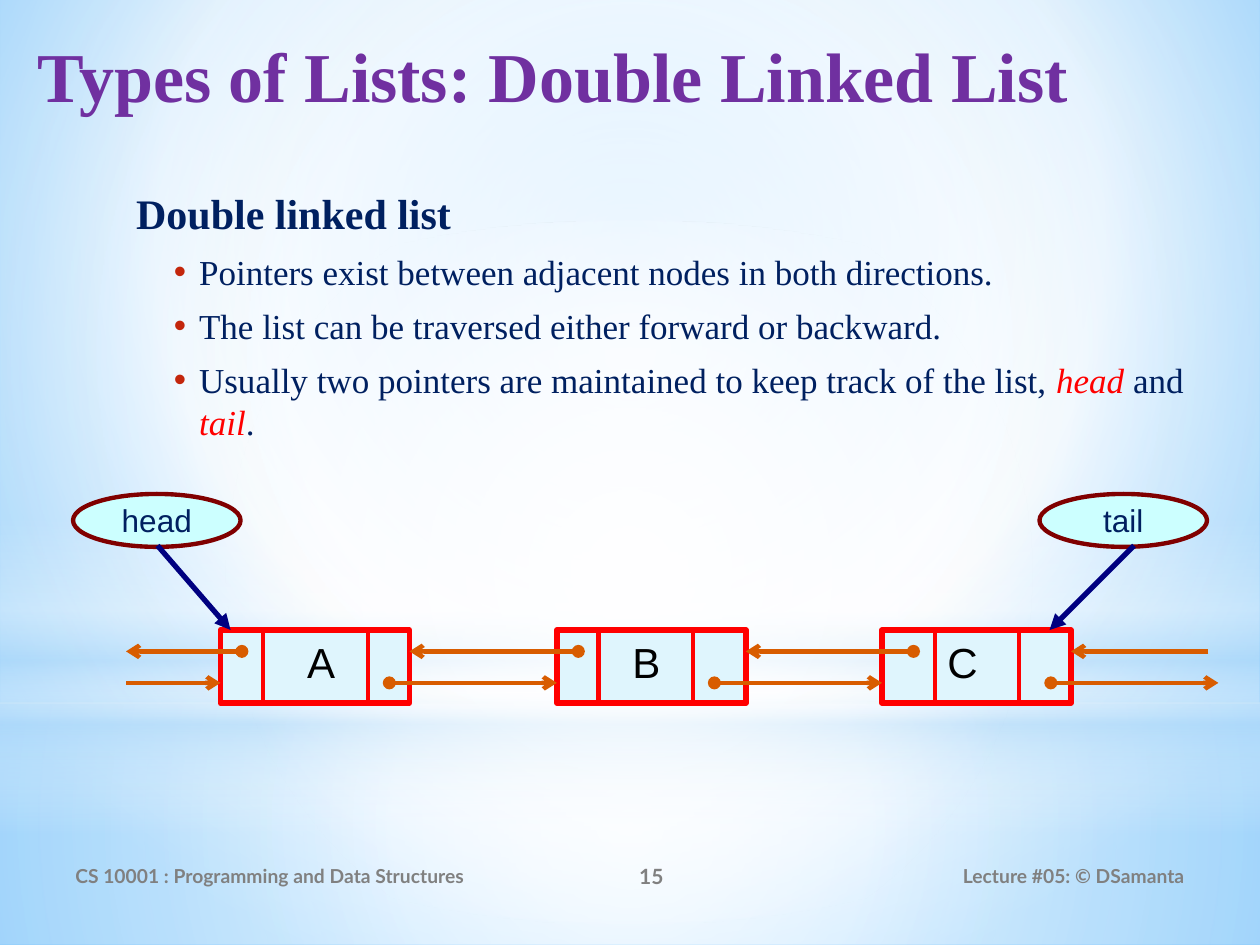
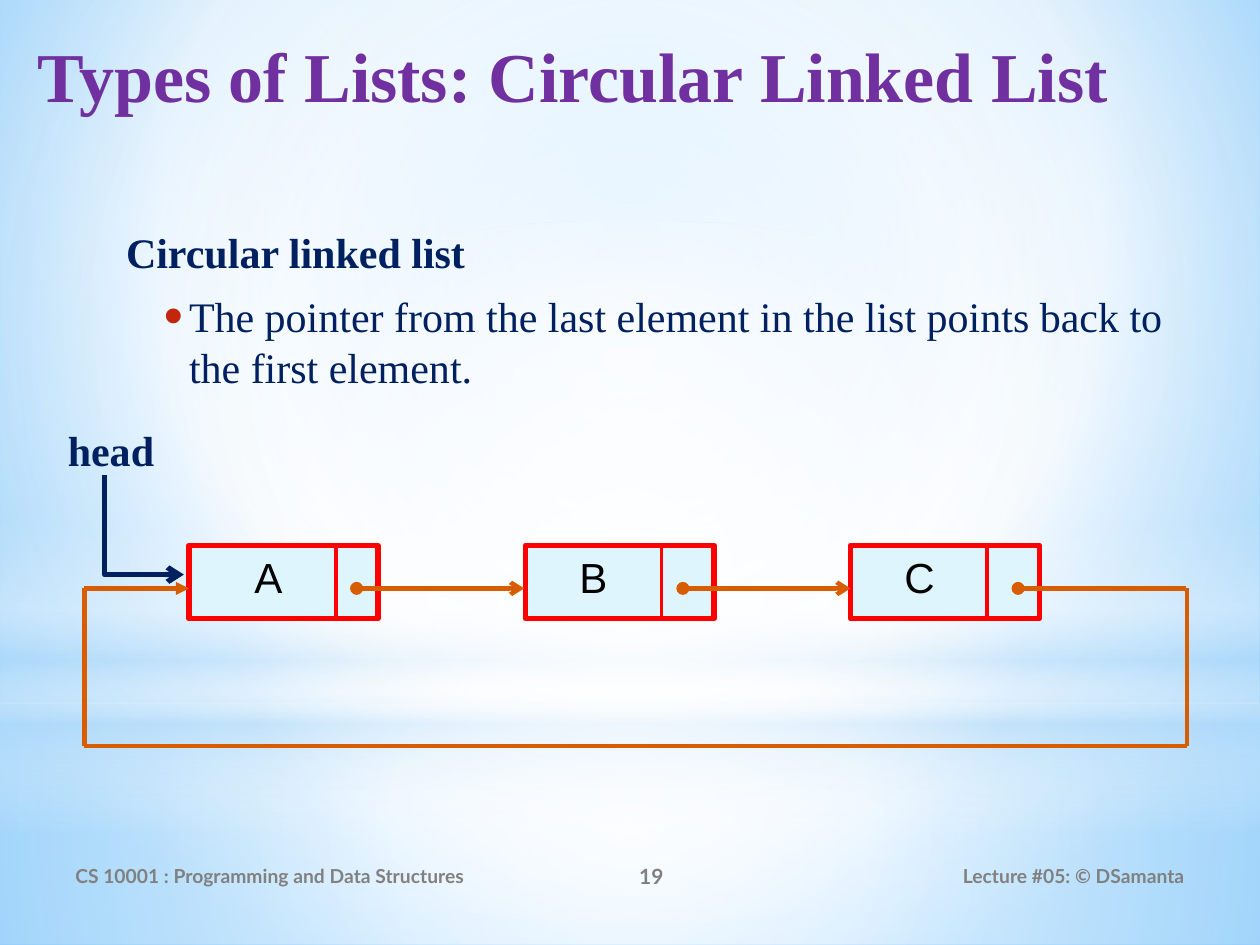
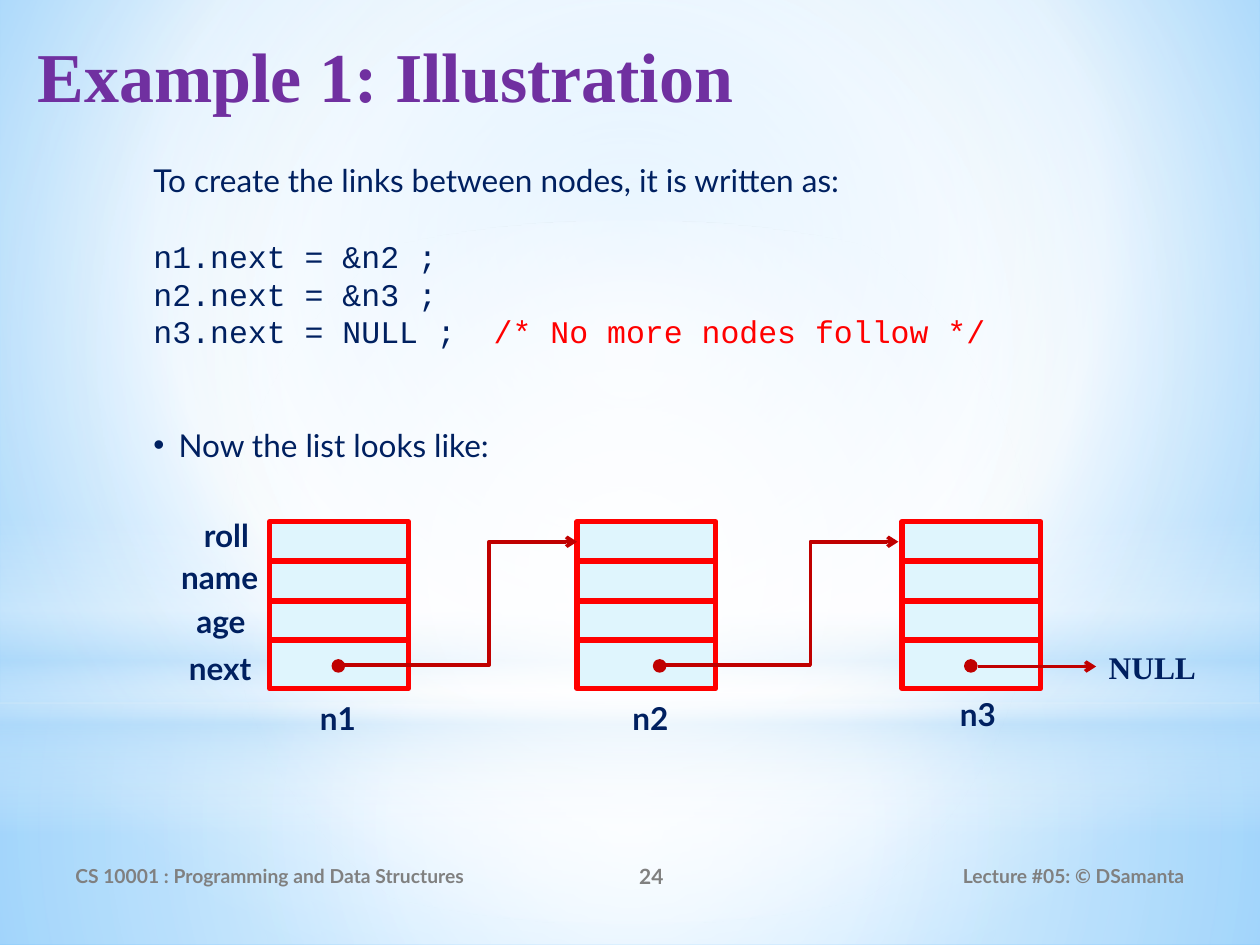
"""Build three lecture slides on linked lists."""
from dataclasses import dataclass, replace
from typing import Optional

from lxml.etree import SubElement
from pptx import Presentation
from pptx.dml.color import RGBColor
from pptx.enum.shapes import MSO_CONNECTOR, MSO_SHAPE
from pptx.enum.text import MSO_ANCHOR, MSO_AUTO_SIZE, PP_ALIGN
from pptx.oxml.ns import qn
from pptx.util import Inches, Pt

PURPLE = RGBColor(0x70, 0x30, 0xA0)
NAVY = RGBColor(0x00, 0x20, 0x60)
POINTER_BLUE = RGBColor(0x00, 0x00, 0x80)
RED = RGBColor(0xFF, 0x00, 0x00)
DARK_RED = RGBColor(0xC0, 0x00, 0x00)
MAROON = RGBColor(0x80, 0x00, 0x00)
BULLET_RED = RGBColor(0xC3, 0x26, 0x0C)
ORANGE = RGBColor(0xD8, 0x5C, 0x00)
GRAY = RGBColor(0x80, 0x80, 0x80)
BLACK = RGBColor(0x00, 0x00, 0x00)
WHITE = RGBColor(0xFF, 0xFF, 0xFF)
CELL_BLUE = RGBColor(0xDF, 0xF5, 0xFD)
PALE_CYAN = RGBColor(0xCC, 0xFF, 0xFF)
SKY = RGBColor(0xB4, 0xDC, 0xFA)
LIGHT_SKY = RGBColor(0x9E, 0xD5, 0xFF)
DEEP_SKY = RGBColor(0x5B, 0xB9, 0xFF)


@dataclass(frozen=True)
class Style:
    """Look of a run of text."""
    font: str
    size: float
    color: RGBColor = NAVY
    bold: bool = False
    italic: bool = False


@dataclass(frozen=True)
class Stroke:
    """Look of a line and of its two ends."""
    color: RGBColor
    width: float
    start: str = "none"
    end: str = "none"


@dataclass(frozen=True)
class Gradient:
    """Stops of position, colour and opacity; radial when focus is given."""
    stops: tuple
    focus: Optional[tuple] = None


@dataclass(frozen=True)
class Glow:
    """One layer of the backdrop."""
    preset: MSO_SHAPE
    bounds: tuple
    gradient: Gradient


@dataclass(frozen=True)
class ListNode:
    """A node with its letter, dividers and the start of its next pointer."""
    letter: str
    left: float
    letter_left: float
    dividers: tuple
    next_dot: float


@dataclass(frozen=True)
class Label:
    """A short caption."""
    text: str
    left: float
    top: float
    width: float


TITLE = Style("Times New Roman", 40, PURPLE, bold=True)
HEADING = Style("Times New Roman", 24, bold=True)
BULLET = Style("Times New Roman", 20)
KEYWORD = replace(BULLET, color=RED, italic=True)
LETTER = Style("Arial", 24, BLACK)
POINTER = Style("Arial", 18)
PROSE = Style("Lato", 18)
FIELD = replace(PROSE, bold=True)
CODE = Style("Courier New", 18)
FOOTER = Style("Lato", 11, GRAY, bold=True)

LINK = Stroke(ORANGE, 2.5, "oval", "arrow")
INCOMING = replace(LINK, start="none")
PLAIN = replace(INCOMING, end="none")
BORDER = Stroke(RED, 3.25)
POINTER_ARROW = Stroke(POINTER_BLUE, 3, end="triangle")
RECORD_LINK = Stroke(DARK_RED, 2, end="arrow")

LINK_LENGTH = 1.33
NODE_WIDTH, NODE_HEIGHT = 1.5, 0.58
CENTRE = (50, 50, 50, 50)
BACKGROUND = Gradient(
    ((0, LIGHT_SKY, 100), (60, WHITE, 100), (100, DEEP_SKY, 100)), (20, 10, 20, 60))
GLOWS = (
    Glow(MSO_SHAPE.RECTANGLE, (0, 5.58, 10, 1.92),
         Gradient(((0, WHITE, 91), (37, WHITE, 76), (100, SKY, 79)), CENTRE)),
    Glow(MSO_SHAPE.RECTANGLE, (0, 0, 10, 5.58),
         Gradient(((0, WHITE, 89), (48, WHITE, 62), (100, SKY, 79)), CENTRE)),
    Glow(MSO_SHAPE.RECTANGLE, (0, 4.12, 10, 2.5),
         Gradient(((0, WHITE, 0), (29, WHITE, 30), (45, SKY, 40),
                   (55, WHITE, 26), (65, SKY, 60), (100, WHITE, 0)))),
    Glow(MSO_SHAPE.OVAL, (0, 1.75, 10, 5.58),
         Gradient(((0, WHITE, 100), (56, WHITE, 0)), CENTRE)),
)


def inches(*lengths: float) -> list:
    """Convert lengths to Inches."""
    return [Inches(length) for length in lengths]


def paint_gradient(fill, owner, gradient: Gradient) -> None:
    """Give a fill inside the owner element its gradient."""
    fill.gradient()
    grad = owner.find(".//" + qn("a:gradFill"))
    for child in list(grad):
        grad.remove(child)
    stop_list = SubElement(grad, qn("a:gsLst"))
    for position, color, opacity in gradient.stops:
        stop = SubElement(stop_list, qn("a:gs"), pos=str(position * 1000))
        tone = SubElement(stop, qn("a:srgbClr"), val=str(color))
        SubElement(tone, qn("a:alpha"), val=str(opacity * 1000))
    if gradient.focus:
        radial = SubElement(grad, qn("a:path"), path="circle")
        edges = {side: str(share * 1000) for side, share in zip("ltrb", gradient.focus)}
        SubElement(radial, qn("a:fillToRect"), **edges)
    else:
        SubElement(grad, qn("a:lin"), ang="5400000", scaled="0")


def build_backdrop(layout, slide) -> None:
    """Draw the glows and hand them to the layout."""
    paint_gradient(layout.background.fill, layout.element, BACKGROUND)
    for number, glow in enumerate(GLOWS, start=20):
        layer = slide.shapes.add_shape(glow.preset, *inches(*glow.bounds))
        layer.shadow.inherit = False
        layer.line.fill.background()
        paint_gradient(layer.fill, layer.element, glow.gradient)
        layer.element.find(".//" + qn("p:cNvPr")).set("id", str(number))
        layout.shapes.element.append(layer.element)


def format_run(run, style: Style) -> None:
    """Apply a style to a run."""
    font = run.font
    font.name, font.size = style.font, Pt(style.size)
    font.bold, font.italic = style.bold, style.italic
    font.color.rgb = style.color


def fill_paragraph(paragraph, *pieces: tuple) -> None:
    """Write pieces of text and style into a paragraph."""
    for text, style in pieces:
        run = paragraph.add_run()
        run.text = text
        format_run(run, style)


def set_bullet(paragraph, margin: float, hanging: float,
               color: Optional[RGBColor] = None, percent: int = 100) -> None:
    """Indent a paragraph, with a bullet if a colour is given."""
    props = paragraph._p.get_or_add_pPr()
    props.set("marL", str(Inches(margin)))
    props.set("indent", str(-Inches(hanging)))
    if color is None:
        SubElement(props, qn("a:buNone"))
        return
    SubElement(SubElement(props, qn("a:buClr")), qn("a:srgbClr"), val=str(color))
    SubElement(props, qn("a:buSzPct"), val=str(percent * 1000))
    SubElement(props, qn("a:buFont"), typeface="Arial")
    SubElement(props, qn("a:buChar"), char="•")


def add_text(slide, bounds: tuple, text: str, style: Style,
             align: PP_ALIGN = PP_ALIGN.LEFT, anchor: MSO_ANCHOR = MSO_ANCHOR.TOP) -> None:
    """Add a one-paragraph text box."""
    frame = slide.shapes.add_textbox(*inches(*bounds)).text_frame
    frame.word_wrap = True
    frame.vertical_anchor = anchor
    frame.text = text
    frame.paragraphs[0].alignment = align
    format_run(frame.paragraphs[0].runs[0], style)


def add_block(slide, preset: MSO_SHAPE, bounds: tuple, fill: RGBColor, stroke: Stroke):
    """Add a filled and outlined shape."""
    block = slide.shapes.add_shape(preset, *inches(*bounds))
    block.shadow.inherit = False
    block.fill.solid()
    block.fill.fore_color.rgb = fill
    block.line.color.rgb = stroke.color
    block.line.width = Pt(stroke.width)
    return block


def add_line(slide, start: tuple, end: tuple, stroke: Stroke,
             bend: Optional[float] = None) -> None:
    """Connect two points, straight or with an elbow at a share of the width."""
    kind = MSO_CONNECTOR.STRAIGHT if bend is None else MSO_CONNECTOR.ELBOW
    link = slide.shapes.add_connector(kind, *inches(*start, *end))
    link.line.color.rgb = stroke.color
    link.line.width = Pt(stroke.width)
    props = link.element.spPr
    outline = props.find(qn("a:ln"))
    SubElement(outline, qn("a:headEnd"), type=stroke.start)
    SubElement(outline, qn("a:tailEnd"), type=stroke.end)
    SubElement(props, qn("a:effectLst"))
    if bend is not None:
        geometry = props.find(qn("a:prstGeom"))
        guides = geometry.find(qn("a:avLst"))
        if guides is None:
            guides = SubElement(geometry, qn("a:avLst"))
        SubElement(guides, qn("a:gd"), name="adj1", fmla=f"val {round(bend * 100000)}")


def place(placeholder, bounds: tuple):
    """Move a placeholder and return its top-anchored text frame."""
    placeholder.left, placeholder.top, placeholder.width, placeholder.height = inches(*bounds)
    frame = placeholder.text_frame
    frame.auto_size = MSO_AUTO_SIZE.NONE
    frame.vertical_anchor = MSO_ANCHOR.TOP
    return frame


def start_slide(slide, title: str, number: int) -> None:
    """Write the title and the footers."""
    frame = place(slide.shapes.title, (0.2, 0.21, 9.53, 1.1))
    frame.text = title
    frame.paragraphs[0].alignment = PP_ALIGN.LEFT
    format_run(frame.paragraphs[0].runs[0], TITLE)
    footers = (
        (0.5, 3.67, "CS 10001 : Programming and Data Structures", FOOTER, PP_ALIGN.LEFT),
        (4.17, 2, str(number), replace(FOOTER, size=12), PP_ALIGN.CENTER),
        (6.75, 2.75, "Lecture #05: © DSamanta", FOOTER, PP_ALIGN.RIGHT),
    )
    for left, width, text, style, align in footers:
        add_text(slide, (left, 6.75, width, 0.4), text, style, align, MSO_ANCHOR.MIDDLE)


def write_body(slide, left: float, top: float, heading: str,
               bullets: tuple, percent: int = 100) -> None:
    """Fill the body with a heading and its bullets."""
    frame = place(slide.placeholders[1], (left, top, 9, 4.95))
    for index, pieces in enumerate((((heading, HEADING),), *bullets)):
        paragraph = frame.add_paragraph() if index else frame.paragraphs[0]
        paragraph.level = 2 if index else 1
        paragraph.space_after = Pt(3)
        if index:
            set_bullet(paragraph, 0.9, 0.2, BULLET_RED, percent)
        else:
            set_bullet(paragraph, 0.4, 0)
        fill_paragraph(paragraph, *pieces)


def draw_node(slide, node: ListNode, top: float, divider: Stroke) -> None:
    """Draw a node box with its dividers and letter."""
    add_block(slide, MSO_SHAPE.RECTANGLE, (node.left, top, NODE_WIDTH, NODE_HEIGHT),
              CELL_BLUE, BORDER)
    for x in node.dividers:
        add_line(slide, (x, top), (x, top + NODE_HEIGHT), divider)
    add_text(slide, (node.letter_left, top, 0.67, 0.5), node.letter, LETTER)


def draw_pointer(slide, name: str, left: float, start_x: float, end_x: float) -> None:
    """Draw a named oval and its arrow to a node."""
    oval = add_block(slide, MSO_SHAPE.OVAL, (left, 3.92, 1.33, 0.42),
                     PALE_CYAN, Stroke(MAROON, 2.5))
    frame = oval.text_frame
    frame.word_wrap = False
    frame.vertical_anchor = MSO_ANCHOR.MIDDLE
    frame.text = name
    frame.paragraphs[0].alignment = PP_ALIGN.CENTER
    format_run(frame.paragraphs[0].runs[0], POINTER)
    add_line(slide, (start_x, 4.33), (end_x, 5), POINTER_ARROW)


def build_double_list(slide) -> None:
    """Fill the slide on double linked lists."""
    start_slide(slide, "Types of Lists: Double Linked List", 15)
    write_body(slide, 0.58, 1.44, "Double linked list", (
        (("Pointers exist between adjacent nodes in both directions.", BULLET),),
        (("The list can be traversed either forward or backward.", BULLET),),
        (("Usually two pointers are maintained to keep track of the list, ", BULLET),
         ("head ", KEYWORD), ("and ", BULLET), ("tail", KEYWORD), (".", BULLET)),
    ))
    top, next_y, previous_y = 5, 5.42, 5.17
    nodes = (
        ListNode("A", 1.75, 2.34, (2.09, 2.92), 3.09),
        ListNode("B", 4.42, 4.92, (4.75, 5.5), 5.67),
        ListNode("C", 7, 7.42, (7.42, 8.09), 8.34),
    )
    for node in nodes:
        draw_node(slide, node, top, Stroke(RED, 2.5))
    for node in nodes:
        add_line(slide, (node.next_dot, next_y), (node.next_dot + LINK_LENGTH, next_y), LINK)
    for start_x, end_x in ((1.92, 1), (4.59, 3.25), (7.25, 5.92)):
        add_line(slide, (start_x, previous_y), (end_x, previous_y), LINK)
    add_line(slide, (1, next_y), (1.75, next_y), INCOMING)
    add_line(slide, (9.59, previous_y), (8.5, previous_y), INCOMING)
    draw_pointer(slide, "head", 0.58, 1.25, 1.83)
    draw_pointer(slide, "tail", 8.25, 9, 8.33)


def build_circular_list(slide) -> None:
    """Fill the slide on circular linked lists."""
    start_slide(slide, "Types of Lists: Circular Linked List", 19)
    write_body(slide, 0.5, 1.75, "Circular linked list", (
        (("The pointer from the last element in the list points back to the first element.",
          replace(HEADING, bold=False)),),
    ), percent=130)
    top, link_y, return_y = 4.33, 4.67, 5.92
    left_x, right_x = 0.67, 9.42
    pitch = 2.58
    nodes = [ListNode(letter, left, 1.92 + i * pitch, (2.67 + i * pitch,), dot)
             for i, (letter, left, dot) in enumerate(
                 (("A", 1.5, 2.83), ("B", 4.17, 5.42), ("C", 6.75, 8.08)))]
    for node in nodes:
        draw_node(slide, node, top, Stroke(RED, 2.25))
    for node in nodes:
        stroke = replace(LINK, end="none") if node is nodes[-1] else LINK
        add_line(slide, (node.next_dot, link_y), (node.next_dot + LINK_LENGTH, link_y), stroke)
    corners = ((right_x, link_y), (right_x, return_y), (left_x, return_y), (left_x, link_y))
    for start, end in zip(corners, corners[1:]):
        add_line(slide, start, end, PLAIN)
    add_line(slide, corners[-1], (nodes[0].left, link_y), replace(PLAIN, end="triangle"))
    add_line(slide, (0.83, 3.77), (1.46, 4.56), Stroke(NAVY, 3, end="arrow"), bend=0)
    add_text(slide, (0.44, 3.32, 0.94, 0.5), "head", HEADING)


def write_linking_code(slide) -> None:
    """Write the statements that link the records."""
    frame = slide.shapes.add_textbox(*inches(1.12, 1.23, 7.97, 2.52)).text_frame
    frame.word_wrap = True
    line_height = 21.6
    lines = (
        (0, (("To create the links between nodes, it is written as:", PROSE),)),
        (1, (("n1.next = &n2 ;", CODE),)),
        (0, (("n2.next = &n3 ;", CODE),)),
        (0, (("n3.next = NULL ;  ", CODE),
             ("/* No more nodes follow */", replace(CODE, color=RED)))),
        (2, (("Now the list looks like:", PROSE),)),
    )
    for index, (gap, pieces) in enumerate(lines):
        paragraph = frame.add_paragraph() if index else frame.paragraphs[0]
        paragraph.line_spacing = Pt(line_height)
        paragraph.space_before = Pt(gap * line_height)
        fill_paragraph(paragraph, *pieces)
    set_bullet(frame.paragraphs[-1], 0.2, 0.2, NAVY)


def build_illustration(slide) -> None:
    """Fill the slide on linked records."""
    start_slide(slide, "Example 1: Illustration", 24)
    body = slide.placeholders[1].element
    body.getparent().remove(body)
    write_linking_code(slide)
    for left in (2.14, 4.58, 7.16):
        for row, height in enumerate((0.31, 0.31, 0.31, 0.38)):
            add_block(slide, MSO_SHAPE.RECTANGLE, (left, 4.14 + row * 0.315, 1.1, height),
                      CELL_BLUE, Stroke(RED, 3))
    captions = (
        Label("roll", 1.52, 4.05, 0.63), Label("name", 1.34, 4.38, 0.97),
        Label("age", 1.46, 4.73, 0.63), Label("next", 1.4, 5.1, 0.75),
        Label("n1", 2.44, 5.5, 0.59), Label("n2", 4.92, 5.5, 0.59),
        Label("n3", 7.52, 5.47, 0.59),
    )
    for caption in captions:
        add_text(slide, (caption.left, caption.top, caption.width, 0.4), caption.text, FIELD)
    for start_x in (2.69, 5.24):
        add_line(slide, (start_x, 5.28), (start_x + 1.89, 4.3), RECORD_LINK, bend=0.63)
    for dot_left in (2.64, 5.19, 7.66):
        add_block(slide, MSO_SHAPE.OVAL, (dot_left, 5.24, 0.09, 0.09),
                  DARK_RED, Stroke(DARK_RED, 1.25))
    add_text(slide, (8.7, 5.09, 0.94, 0.4), "NULL", replace(HEADING, size=18))
    add_line(slide, (7.76, 5.29), (8.7, 5.29), RECORD_LINK)


def main() -> None:
    """Build and save the slides."""
    deck = Presentation()
    deck.slide_width, deck.slide_height = inches(10, 7.5)
    layout = deck.slide_layouts[1]
    for index, build in enumerate((build_double_list, build_circular_list, build_illustration)):
        slide = deck.slides.add_slide(layout)
        if index == 0:
            build_backdrop(layout, slide)
        build(slide)
    deck.save("out.pptx")


if __name__ == "__main__":
    main()
